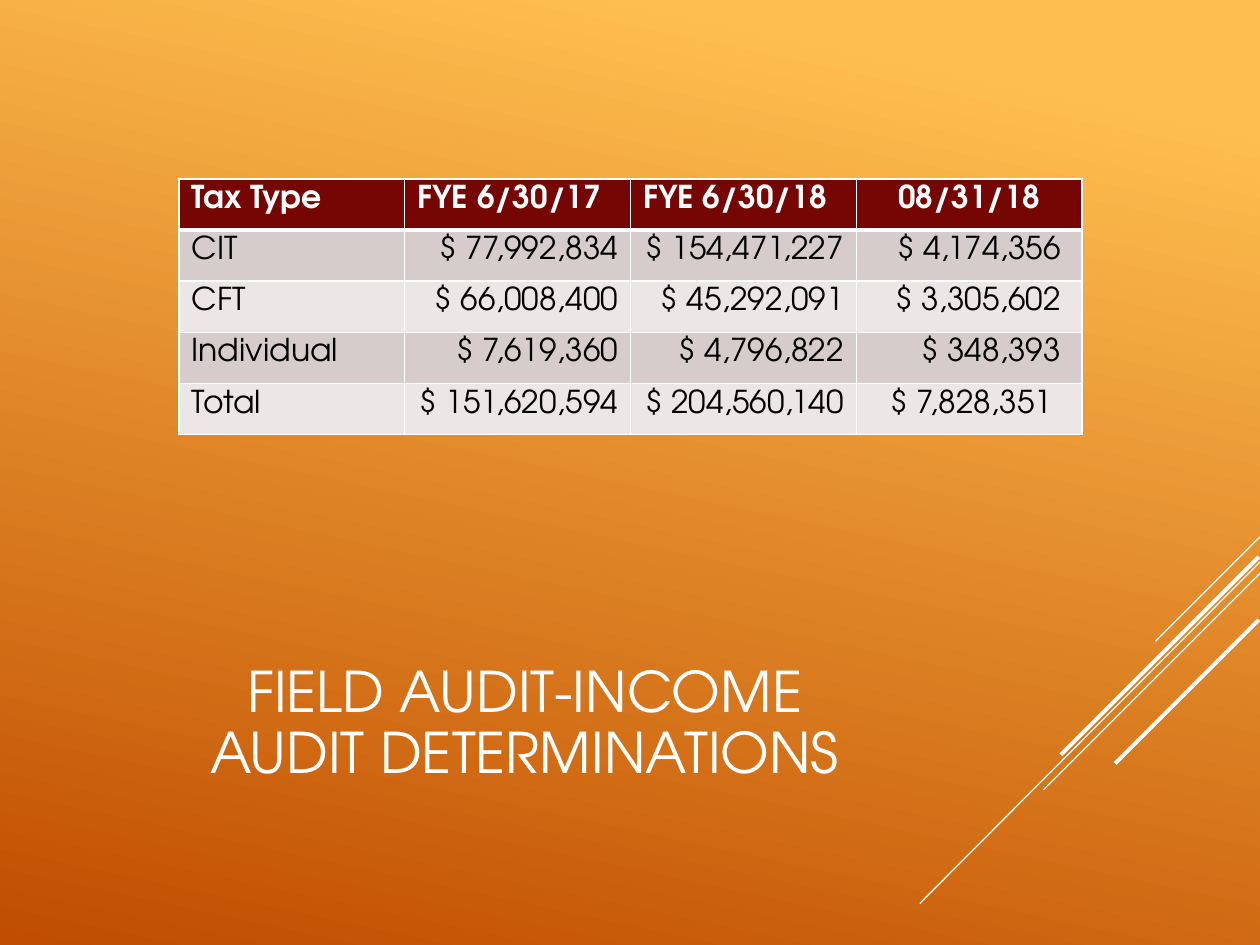
import pptx
import pptx.util
import pptx.dml.color
import pptx.enum.shapes
import pptx.enum.text
import pptx.oxml
import pptx.oxml.ns
from lxml import etree

Inches = pptx.util.Inches
Pt = pptx.util.Pt
ALIGN = pptx.enum.text.PP_ALIGN
FONT = "TeX Gyre Adventor"
COLORS = {
    "light": "FFBF50", "dark": "C04D00", "white": "FFFFFF", "black": "000000",
    "header": "760603", "odd_row": "D6CCCC", "even_row": "ECE7E7",
}


def rgb(name):
    return pptx.dml.color.RGBColor.from_string(COLORS[name])


def set_borders(cell, bottom_width):
    properties = cell._tc.get_or_add_tcPr()
    widths = {"lnL": 1, "lnR": 1, "lnT": 1, "lnB": bottom_width}
    for position, (tag, width) in enumerate(widths.items()):
        line = etree.Element(pptx.oxml.ns.qn("a:" + tag), w=str(Pt(width)))
        fill = etree.SubElement(line, pptx.oxml.ns.qn("a:solidFill"))
        etree.SubElement(fill, pptx.oxml.ns.qn("a:srgbClr"), val=COLORS["white"])
        properties.insert(position, line)


presentation = pptx.Presentation()
presentation.slide_width = Inches(10)
presentation.slide_height = Inches(7.5)
slide = presentation.slides.add_slide(presentation.slide_layouts[6])

# Background gradient
background = slide.background.fill
background.gradient()
background.gradient_angle = 258
for stop, position, color in zip(background.gradient_stops, (0.1, 1), ("light", "dark")):
    stop.position = position
    stop.color.rgb = rgb(color)

# Diagonal lines in the lower right corner
diagonals = [
    (10, 4.26, 9.17, 5.09, 0.75),
    (10, 4.46, 7.3, 7.17, 0.75),
    (10, 4.55, 8.28, 6.27, 0.75),
    (9.99, 4.42, 8.42, 5.99, 2.25),
    (9.99, 4.92, 8.85, 6.06, 2.25),
]
for *ends, width in diagonals:
    connector = slide.shapes.add_connector(
        pptx.enum.shapes.MSO_CONNECTOR.STRAIGHT, *map(Inches, ends))
    connector.line.color.rgb = rgb("white")
    connector.line.width = Pt(width)
    etree.SubElement(connector._element.spPr, pptx.oxml.ns.qn("a:effectLst"))

# Title
title = slide.shapes.add_textbox(Inches(0.58), Inches(4.92), Inches(7.17), Inches(1.67))
title.text_frame.word_wrap = True
title.text_frame.vertical_anchor = pptx.enum.text.MSO_ANCHOR.MIDDLE
paragraph = title.text_frame.paragraphs[0]
paragraph.text = "FIELD AUDIT-INCOME\vAUDIT DETERMINATIONS"
paragraph.alignment = ALIGN.CENTER
paragraph.line_spacing = 0.9
paragraph.font.name = FONT
paragraph.font.size = Pt(32)
paragraph.font.color.rgb = rgb("white")

# Audit table
rows = [
    ("Tax Type", "FYE 6/30/17", "FYE 6/30/18", "08/31/18"),
    ("CIT", "$ 77,992,834", "$ 154,471,227", "$ 4,174,356"),
    ("CFT", "$ 66,008,400", "$ 45,292,091", "$ 3,305,602"),
    ("Individual", "$ 7,619,360", "$ 4,796,822", "$ 348,393"),
    ("Total", "$ 151,620,594", "$ 204,560,140", "$ 7,828,351"),
]
last = len(rows) - 1
table = slide.shapes.add_table(
    len(rows), 4, Inches(1.42), Inches(1.42), Inches(7.17), Inches(2.03)).table
for row, values in enumerate(rows):
    for column, value in enumerate(values):
        cell = table.cell(row, column)
        is_header = row == 0
        cell.fill.solid()
        cell.fill.fore_color.rgb = rgb(
            "header" if is_header else "odd_row" if row % 2 else "even_row")
        set_borders(cell, 3 if is_header else 1)
        paragraph = cell.text_frame.paragraphs[0]
        paragraph.text = value
        paragraph.font.name = FONT
        paragraph.font.size = Pt(18)
        paragraph.font.bold = is_header
        paragraph.font.color.rgb = rgb("white" if is_header else "black")
        if is_header:
            paragraph.alignment = ALIGN.CENTER if column == 3 else ALIGN.LEFT
        elif column:
            paragraph.alignment = ALIGN.RIGHT
            # The last column is set in further from its right edge
            if column == 3:
                cell.margin_right = Inches(0.24 if row == last else 0.17)

presentation.save("out.pptx")
